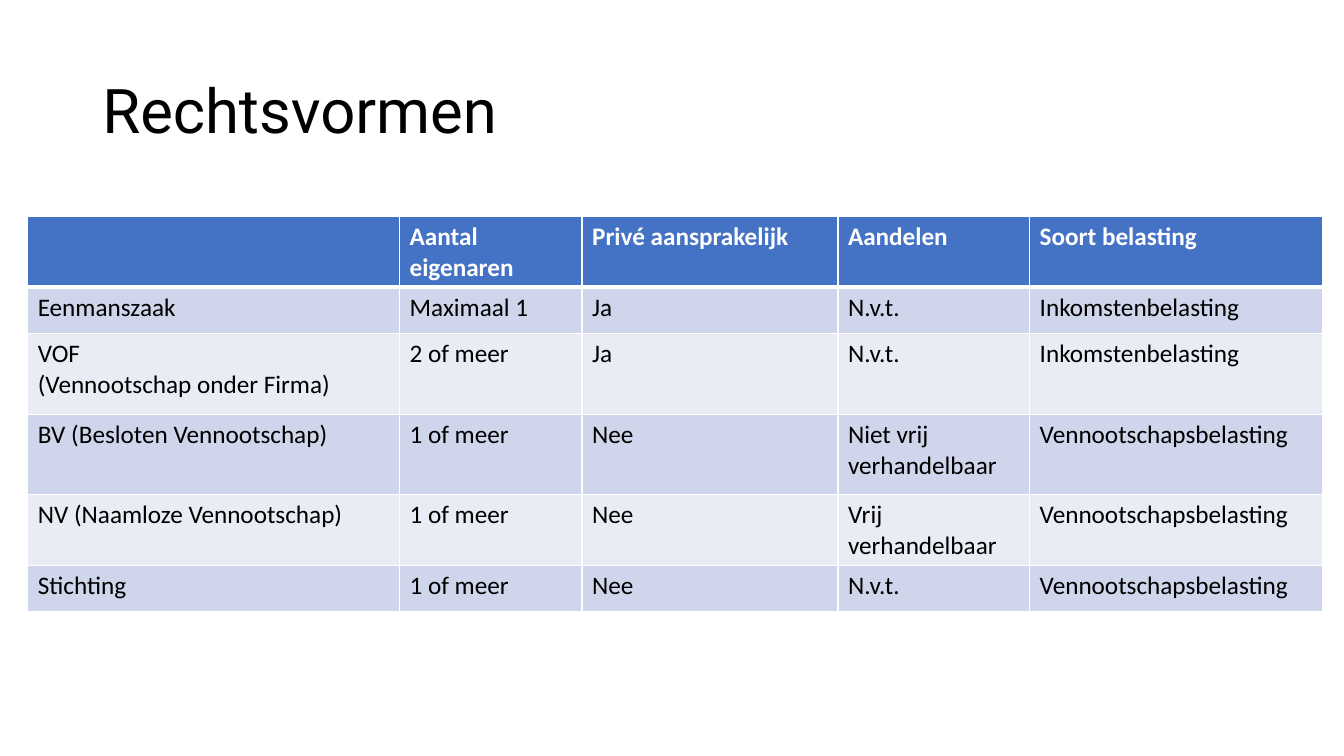
from lxml import etree
from pptx import Presentation
from pptx.dml.color import RGBColor
from pptx.enum.text import MSO_ANCHOR
from pptx.oxml.ns import qn
from pptx.util import Cm, Pt

WHITE = RGBColor(0xFF, 0xFF, 0xFF)
BLACK = RGBColor(0x00, 0x00, 0x00)
HEADER_BLUE = RGBColor(0x44, 0x72, 0xC4)
BAND_DARK = RGBColor(0xCF, 0xD5, 0xEA)
BAND_LIGHT = RGBColor(0xE9, 0xEB, 0xF5)

COLUMN_WIDTHS = [9.37, 4.6, 6.45, 4.83, 7.37]
ROW_HEIGHTS = [1.17, 1.17, 2.03, 2.03, 1.17, 1.17]
LEGAL_FORMS = [
    ["", "Aantal eigenaren", "Privé aansprakelijk", "Aandelen", "Soort belasting"],
    ["Eenmanszaak", "Maximaal 1", "Ja", "N.v.t.", "Inkomstenbelasting"],
    ["VOF\n(Vennootschap onder Firma)", "2 of meer", "Ja", "N.v.t.", "Inkomstenbelasting"],
    ["BV (Besloten Vennootschap)", "1 of meer", "Nee", "Niet vrij verhandelbaar",
     "Vennootschapsbelasting"],
    ["NV (Naamloze Vennootschap)", "1 of meer", "Nee", "Vrij verhandelbaar",
     "Vennootschapsbelasting"],
    ["Stichting", "1 of meer", "Nee", "N.v.t.", "Vennootschapsbelasting"],
]


def write_text(frame, text, font="Calibri", size=18, color=BLACK, bold=False, spacing=None):
    """Fill the frame's first paragraph; a newline becomes a line break."""
    paragraph = frame.paragraphs[0]
    paragraph.text = text
    paragraph.line_spacing = spacing
    for run in paragraph.runs:
        run.font.name = font
        run.font.size = Pt(size)
        run.font.bold = bold
        run.font.color.rgb = color


def add_white_borders(cell, top, bottom):
    """Draw the four cell borders; top and bottom are widths in points."""
    properties = cell._tc.get_or_add_tcPr()
    widths = {"a:lnL": 1, "a:lnR": 1, "a:lnT": top, "a:lnB": bottom}
    for position, (side, width) in enumerate(widths.items()):
        line = etree.Element(qn(side), w=str(Pt(width)))
        fill = etree.SubElement(line, qn("a:solidFill"))
        etree.SubElement(fill, qn("a:srgbClr"), val=str(WHITE))
        properties.insert(position, line)


prs = Presentation()
prs.slide_width, prs.slide_height = Cm(33.87), Cm(19.05)
slide = prs.slides.add_slide(prs.slide_layouts[6])

title = slide.shapes.add_textbox(Cm(2.33), Cm(1.01), Cm(29.21), Cm(3.68)).text_frame
title.word_wrap = True
title.vertical_anchor = MSO_ANCHOR.MIDDLE
write_text(title, "Rechtsvormen", font="Roboto", size=44, spacing=0.9)

table = slide.shapes.add_table(
    len(ROW_HEIGHTS), len(COLUMN_WIDTHS), Cm(0.7), Cm(5.46),
    Cm(sum(COLUMN_WIDTHS)), Cm(sum(ROW_HEIGHTS))).table
for column, width in zip(table.columns, COLUMN_WIDTHS):
    column.width = Cm(width)

for row_number, (row, height) in enumerate(zip(table.rows, ROW_HEIGHTS)):
    row.height = Cm(height)
    is_header = row_number == 0
    band = BAND_DARK if row_number % 2 else BAND_LIGHT
    for cell, text in zip(row.cells, LEGAL_FORMS[row_number]):
        cell.fill.solid()
        cell.fill.fore_color.rgb = HEADER_BLUE if is_header else band
        add_white_borders(cell, top=3 if row_number == 1 else 1, bottom=3 if is_header else 1)
        write_text(cell.text_frame, text, color=WHITE if is_header else BLACK, bold=is_header)

prs.save("out.pptx")
